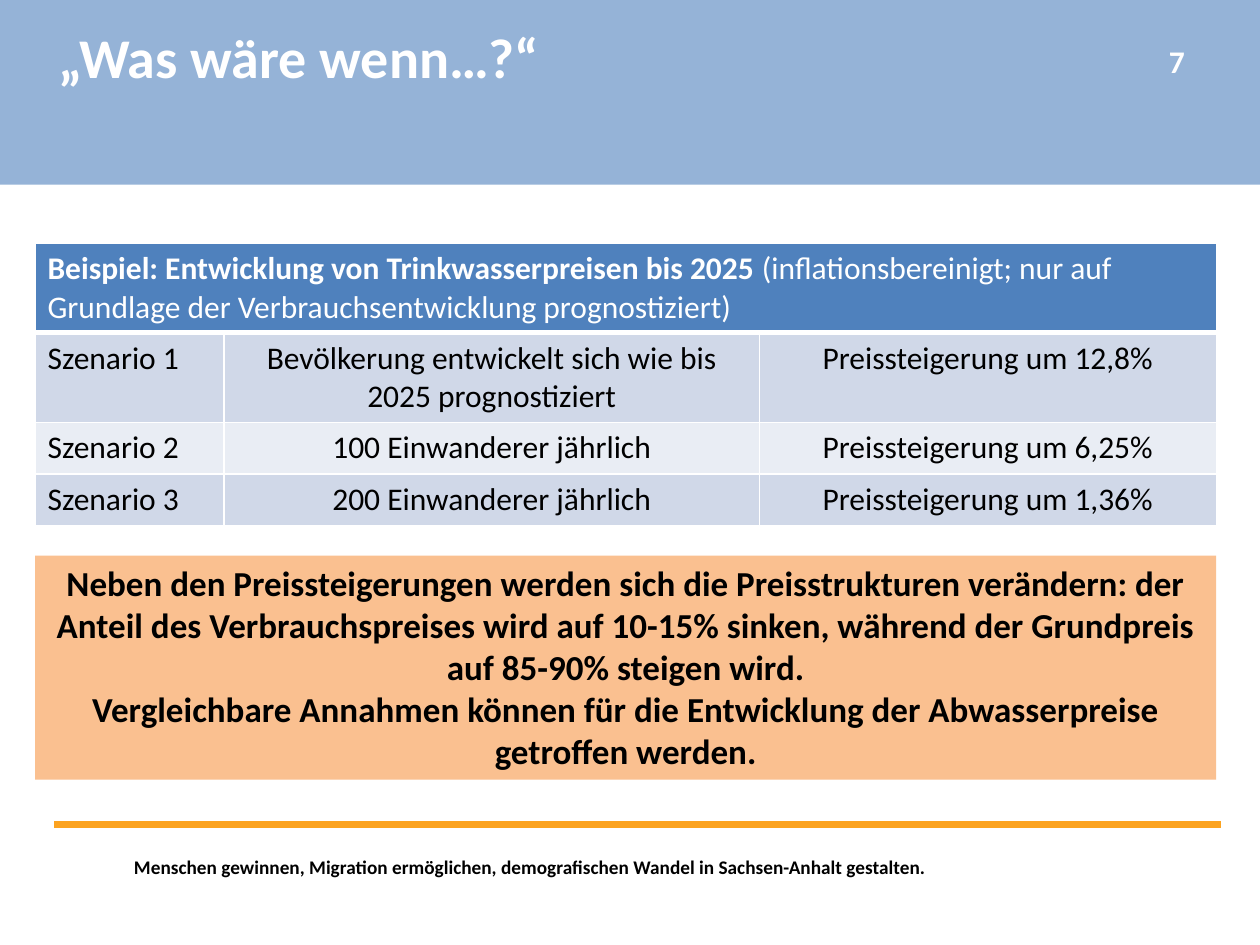
from dataclasses import dataclass

from lxml.etree import SubElement
from pptx import Presentation
from pptx.dml.color import RGBColor
from pptx.enum.shapes import MSO_CONNECTOR, MSO_SHAPE
from pptx.enum.text import MSO_ANCHOR, MSO_AUTO_SIZE, PP_ALIGN
from pptx.oxml.ns import qn
from pptx.util import Pt


@dataclass(frozen=True)
class Theme:
    font: str = "Calibri"
    white: str = "FFFFFF"
    black: str = "000000"
    banner: str = "95B3D7"
    rule: str = "FCA320"
    header: str = "4F81BD"
    bands: tuple = ("D0D8E8", "E9EDF4")
    callout: str = "FAC090"
    title_size: int = 32
    callout_size: int = 20
    body_size: int = 18
    footer_size: int = 11


class SlideBuilder:
    """Holds the theme and the current slide, and adds each kind of element."""

    def __init__(self, prs, theme):
        self.theme = theme
        self.s = prs.slides.add_slide(prs.slide_layouts[5])

    def fill_text(self, tf, paragraphs, size, color, align=PP_ALIGN.LEFT):
        for i, runs in enumerate(paragraphs):
            p = tf.paragraphs[0] if i == 0 else tf.add_paragraph()
            p.alignment = align
            for text, bold in runs:
                r = p.add_run()
                r.text = text
                fmt = {"name": self.theme.font, "size": Pt(size), "bold": bold}
                for key, value in fmt.items():
                    setattr(r.font, key, value)
                r.font.color.rgb = RGBColor.from_string(color)

    def frame(self, tf, wrap=True, anchor=MSO_ANCHOR.TOP):
        fmt = {"word_wrap": wrap, "vertical_anchor": anchor, "auto_size": MSO_AUTO_SIZE.NONE}
        for key, value in fmt.items():
            setattr(tf, key, value)
        return tf

    def title(self, box, text):
        sp = self.s.shapes.title
        for key, value in zip(("left", "top", "width", "height"), box):
            setattr(sp, key, Pt(value))
        self.s.shapes._spTree.append(sp._element)
        tf = self.frame(sp.text_frame, wrap=False)
        self.fill_text(tf, [[(text, True)]], self.theme.title_size, self.theme.white)

    def text(self, box, text, size, color, anchor=MSO_ANCHOR.TOP):
        sp = self.s.shapes.add_textbox(*map(Pt, box))
        tf = self.frame(sp.text_frame, anchor=anchor)
        self.fill_text(tf, [[(text, True)]], size, color, PP_ALIGN.CENTER)

    def rect(self, box, fill, paragraphs=()):
        sp = self.s.shapes.add_shape(MSO_SHAPE.RECTANGLE, *map(Pt, box))
        sp.shadow.inherit = False
        sp.fill.solid()
        sp.fill.fore_color.rgb = RGBColor.from_string(fill)
        sp.line.fill.background()
        tf = self.frame(sp.text_frame)
        self.fill_text(tf, [[(text, True)] for text in paragraphs], self.theme.callout_size,
                       self.theme.black, PP_ALIGN.CENTER)

    def line(self, x1, y1, x2, y2, color, width):
        cx = self.s.shapes.add_connector(MSO_CONNECTOR.STRAIGHT, *map(Pt, (x1, y1, x2, y2)))
        cx.line.color.rgb = RGBColor.from_string(color)
        cx.line.width = Pt(width)
        SubElement(cx._element.spPr, qn("a:effectLst"))

    def cell(self, cell, runs, fill, color, align, widths):
        tcPr = cell._tc.get_or_add_tcPr()
        for side, width in widths.items():
            ln = SubElement(tcPr, qn(f"a:ln{side}"), w=str(Pt(width)))
            SubElement(SubElement(ln, qn("a:solidFill")), qn("a:srgbClr"), val=self.theme.white)
        cell.fill.solid()
        cell.fill.fore_color.rgb = RGBColor.from_string(fill)
        self.fill_text(cell.text_frame, [runs], self.theme.body_size, color, align)

    def table(self, box, widths, heights, header, rows):
        t = self.theme
        shape = self.s.shapes.add_table(len(heights), len(widths), *map(Pt, box))
        tbl = shape.table
        for column, width in zip(tbl.columns, widths):
            column.width = Pt(width)
        for row, height in zip(tbl.rows, heights):
            row.height = Pt(height)
        thin = {"L": 1, "R": 1, "T": 1, "B": 1}
        tbl.cell(0, 0).merge(tbl.cell(0, len(widths) - 1))
        for j in range(len(widths)):
            self.cell(tbl.cell(0, j), [] if j else header, t.header, t.white,
                      PP_ALIGN.LEFT, thin | {"B": 3})
        for i, row in enumerate(rows, 1):
            for j, text in enumerate(row):
                self.cell(tbl.cell(i, j), [(text, False)], t.bands[(i - 1) % 2], t.black,
                          PP_ALIGN.CENTER if j else PP_ALIGN.LEFT,
                          thin | {"T": 3 if i == 1 else 1})


def main():
    prs = Presentation()
    prs.slide_width, prs.slide_height = Pt(720), Pt(540)
    t = Theme()
    b = SlideBuilder(prs, t)
    left, width = 20, 675

    b.line(31, 471, 698, 471, t.rule, 4)
    b.rect((0, 0, 720, 105.5), t.banner)
    b.text((23, 485, 560, 34),
           "Menschen gewinnen, Migration ermöglichen, demografischen Wandel in "
           "Sachsen-Anhalt gestalten.", t.footer_size, t.black)
    b.title((26, 9.5, 292, 46), "„Was wäre wenn…?“")
    b.table((left, 139, width, 159), (108, 306, 261), (50, 50, 29.5, 29.5),
            [("Beispiel: Entwicklung von Trinkwasserpreisen bis 2025 ", True),
             ("(inflationsbereinigt; nur auf Grundlage der Verbrauchsentwicklung "
              "prognostiziert)", False)],
            [("Szenario 1", "Bevölkerung entwickelt sich wie bis 2025 prognostiziert",
              "Preissteigerung um 12,8%"),
             ("Szenario 2", "100 Einwanderer jährlich", "Preissteigerung um 6,25%"),
             ("Szenario 3", "200 Einwanderer jährlich", "Preissteigerung um 1,36%")])
    b.rect((left, 317.5, width, 128), t.callout,
           ["Neben den Preissteigerungen werden sich die Preisstrukturen verändern: der "
            "Anteil des Verbrauchspreises wird auf 10-15% sinken, während der Grundpreis "
            "auf 85-90% steigen wird.",
            "Vergleichbare Annahmen können für die Entwicklung der Abwasserpreise "
            "getroffen werden."])
    b.text((643.5, 20, 58, 29), "7", t.body_size, t.white, MSO_ANCHOR.MIDDLE)
    prs.save("out.pptx")


if __name__ == "__main__":
    main()
